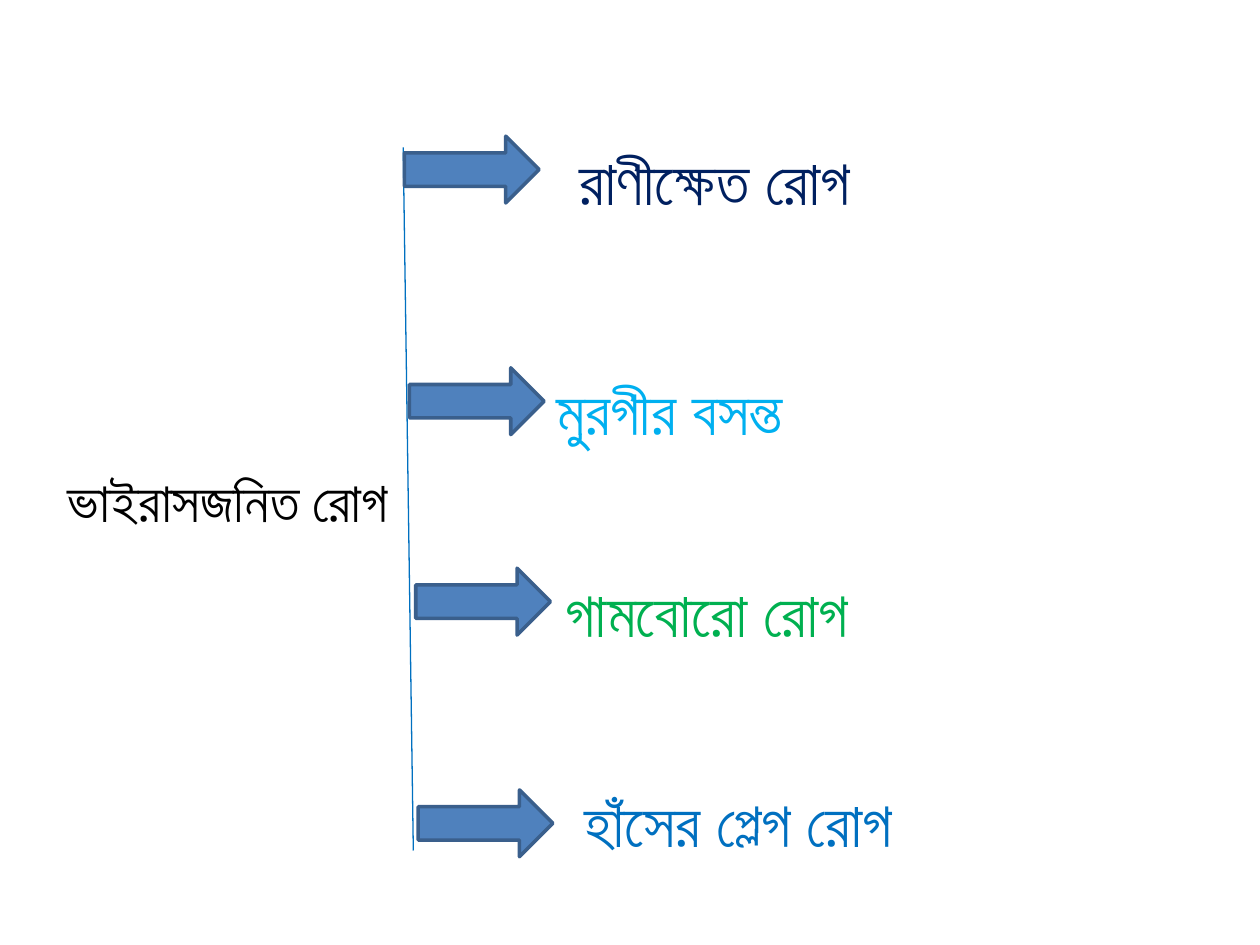
from pptx import Presentation
from pptx.dml.color import RGBColor
from pptx.enum.shapes import MSO_CONNECTOR, MSO_SHAPE
from pptx.enum.text import MSO_AUTO_SIZE
from pptx.oxml.ns import qn
from pptx.util import Pt
from lxml import etree

RIGHT_ARROW = MSO_SHAPE.RIGHT_ARROW
STRAIGHT = MSO_CONNECTOR.STRAIGHT
FIT_TEXT = MSO_AUTO_SIZE.SHAPE_TO_FIT_TEXT

FONT = "Arial"
ARROW_SIZE = (77, 38.2)
LABEL_HEIGHT = 51.1

# Spans of the category heading: text, size
CATEGORY = [("ভাইরাসজনিত", 32), (" ", 28), ("রোগ", 32)]

# name, colour, arrow (left, top), label (left, top, width)
DISEASES = [
    ("রাণীক্ষেত রোগ", "002060", (231.1, 77.8), (324, 77.8, 221.8)),
    ("মুরগীর বসন্ত", "00B0F0", (234, 210.2), (311, 209.5, 218.2)),
    ("গামবোরো রোগ", "00B050", (237.6, 324.7), (316.1, 324.7, 229.7)),
    ("হাঁসের প্লেগ রোগ", "0070C0", (239, 451.4), (326.9, 445, 221.8)),
]


def colour(value):
    return RGBColor.from_string(value)


def add_text(page, spans, left, top, width, height, color="000000"):
    box = page.shapes.add_textbox(Pt(left), Pt(top), Pt(width), Pt(height))
    frame = box.text_frame
    frame.word_wrap = True
    frame.auto_size = FIT_TEXT
    for text, size in spans:
        span = frame.paragraphs[0].add_run()
        span.text = text
        span.font.name = FONT
        span.font.size = Pt(size)
        span.font.color.rgb = colour(color)


def add_arrow(page, left, top):
    width, height = ARROW_SIZE
    arrow = page.shapes.add_shape(RIGHT_ARROW, Pt(left), Pt(top), Pt(width), Pt(height))
    arrow.shadow.inherit = False
    arrow.fill.solid()
    arrow.fill.fore_color.rgb = colour("4F81BD")
    arrow.line.color.rgb = colour("3A5F8C")
    arrow.line.width = Pt(2)


def add_stem(page, start, end):
    stem = page.shapes.add_connector(STRAIGHT, *map(Pt, start + end))
    stem.line.color.rgb = colour("0070C0")
    stem.line.width = Pt(0.75)
    etree.SubElement(stem._element.spPr, qn("a:effectLst"))


def main():
    deck = Presentation()
    deck.slide_width, deck.slide_height = Pt(720), Pt(540)
    page = deck.slides.add_slide(deck.slide_layouts[6])

    add_text(page, CATEGORY, 31.7, 262.8, 257.8, 46.1)
    add_stem(page, (230.4, 84.2), (236.2, 486))
    for name, color, arrow, label in DISEASES:
        add_arrow(page, *arrow)
        add_text(page, [(name, 36)], *label, LABEL_HEIGHT, color=color)

    deck.save("out.pptx")


if __name__ == "__main__":
    main()
